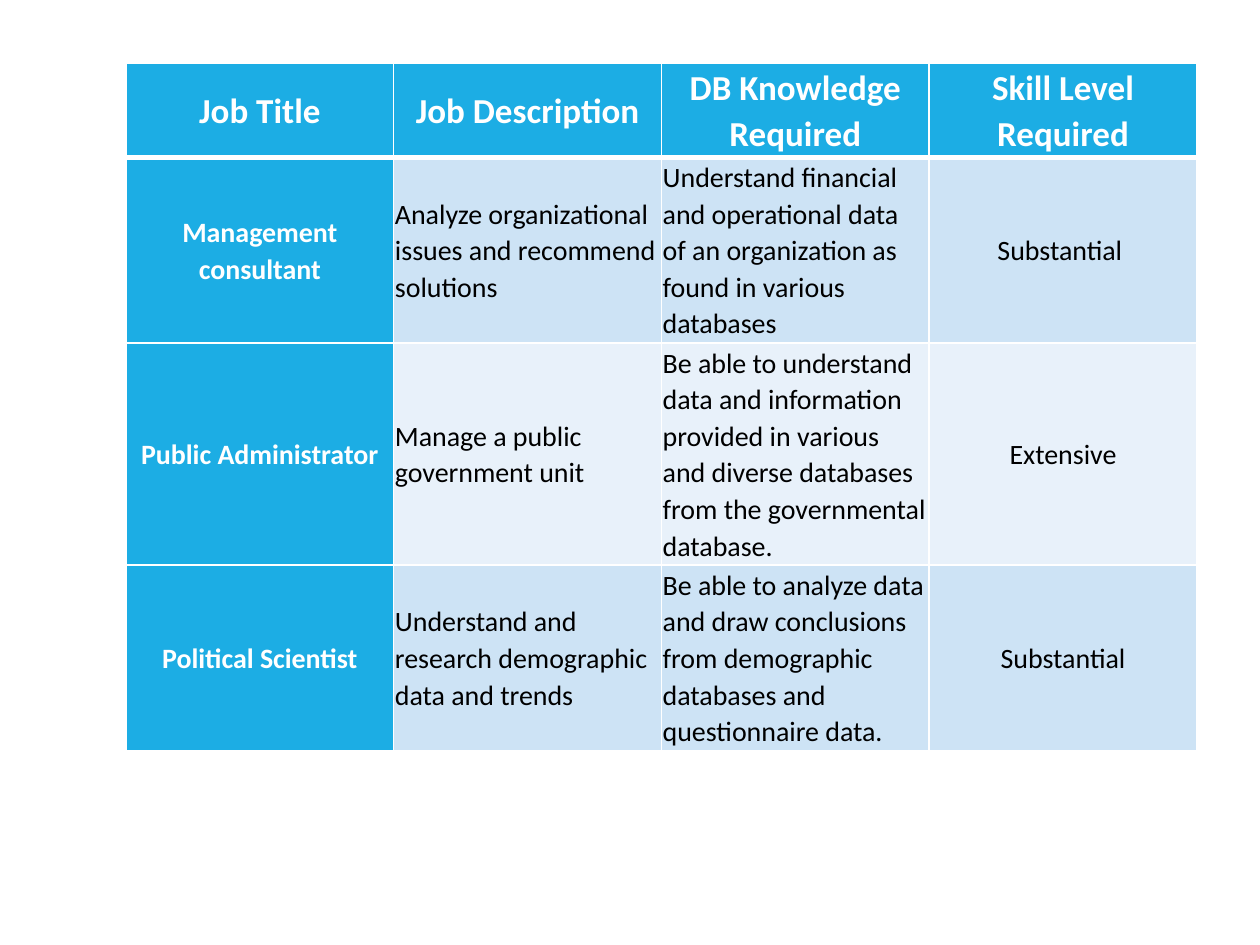
import lxml.etree
import pptx
import pptx.dml.color
import pptx.enum.text
import pptx.oxml.ns
import pptx.util

Inches = pptx.util.Inches
Pt = pptx.util.Pt
RGBColor = pptx.dml.color.RGBColor
PP_ALIGN = pptx.enum.text.PP_ALIGN
qn = pptx.oxml.ns.qn

WHITE = RGBColor(0xFF, 0xFF, 0xFF)
BLACK = RGBColor(0, 0, 0)
BLUE = RGBColor(0x1C, 0xAD, 0xE4)
BAND_DARK = RGBColor(0xCD, 0xE3, 0xF5)
BAND_LIGHT = RGBColor(0xE8, 0xF1, 0xFA)

JOBS = [
    ("Job Title", "Job Description", "DB Knowledge Required", "Skill Level Required"),
    ("Management consultant",
     "Analyze organizational issues and recommend solutions",
     "Understand financial and operational data of an organization as found in various databases",
     "Substantial "),
    ("Public Administrator",
     "Manage a public government unit",
     "Be able to understand data and information provided in various and diverse databases "
     "from the governmental database.",
     "Extensive"),
    ("Political Scientist",
     "Understand and research demographic data and trends",
     "Be able to analyze data and draw conclusions from demographic databases and "
     "questionnaire data.",
     "Substantial"),
]
ROW_HEIGHTS = [0.74, 1.47, 1.76, 1.47]


def write_text(tf, text, size=16, color=BLACK, bold=False, align=PP_ALIGN.LEFT, after=8):
    """Write one formatted paragraph into a text frame."""
    p = tf.paragraphs[0]
    p.alignment = align
    p.line_spacing = 1.07
    p.space_before = Pt(0)
    p.space_after = Pt(after)
    r = p.add_run()
    r.text = text
    r.font.name = "Calibri"
    r.font.size = Pt(size)
    r.font.bold = bold
    r.font.color.rgb = color


def set_borders(cell, **widths):
    """Draw white cell borders with widths in points, keyed by side."""
    tc_pr = cell._tc.get_or_add_tcPr()
    for side, width in widths.items():
        ln = lxml.etree.SubElement(tc_pr, qn(f"a:ln{side}"), w=str(Pt(width)))
        fill = lxml.etree.SubElement(ln, qn("a:solidFill"))
        lxml.etree.SubElement(fill, qn("a:srgbClr"), val=str(WHITE))


def format_cell(cell, text, row, col):
    """Style a cell as a header, job title or banded body cell."""
    header = row == 0
    strong = header or col == 0
    set_borders(cell, L=1, R=1, T=3 if row == 1 else 1, B=3 if header else 1)
    cell.fill.solid()
    cell.fill.fore_color.rgb = BLUE if strong else BAND_DARK if row % 2 else BAND_LIGHT
    cell.vertical_anchor = pptx.enum.text.MSO_ANCHOR.MIDDLE
    cell.margin_left = cell.margin_right = Inches(0.01)
    cell.margin_top = cell.margin_bottom = Inches(0.01)
    write_text(cell.text_frame, text, size=20 if header else 16,
               color=WHITE if strong else BLACK, bold=strong,
               align=PP_ALIGN.CENTER if strong or col == 3 else PP_ALIGN.LEFT,
               after=0 if header else 8)


def add_job_table(s, left, top, width):
    """Place the job table with equal columns across the given width."""
    cols = len(JOBS[0])
    table = s.shapes.add_table(len(JOBS), cols, left, top, width,
                               Inches(sum(ROW_HEIGHTS))).table
    for column in table.columns:
        column.width = width // cols
    for row, (texts, height) in enumerate(zip(JOBS, ROW_HEIGHTS)):
        table.rows[row].height = Inches(height)
        for col, text in enumerate(texts):
            format_cell(table.cell(row, col), text, row, col)


def main():
    """Build and save the slide."""
    prs = pptx.Presentation()
    prs.slide_width = Inches(10)
    prs.slide_height = Inches(7.5)
    s = prs.slides.add_slide(prs.slide_layouts[6])
    add_job_table(s, Inches(1), Inches(0.5), Inches(8.5))
    prs.save("out.pptx")


if __name__ == "__main__":
    main()
